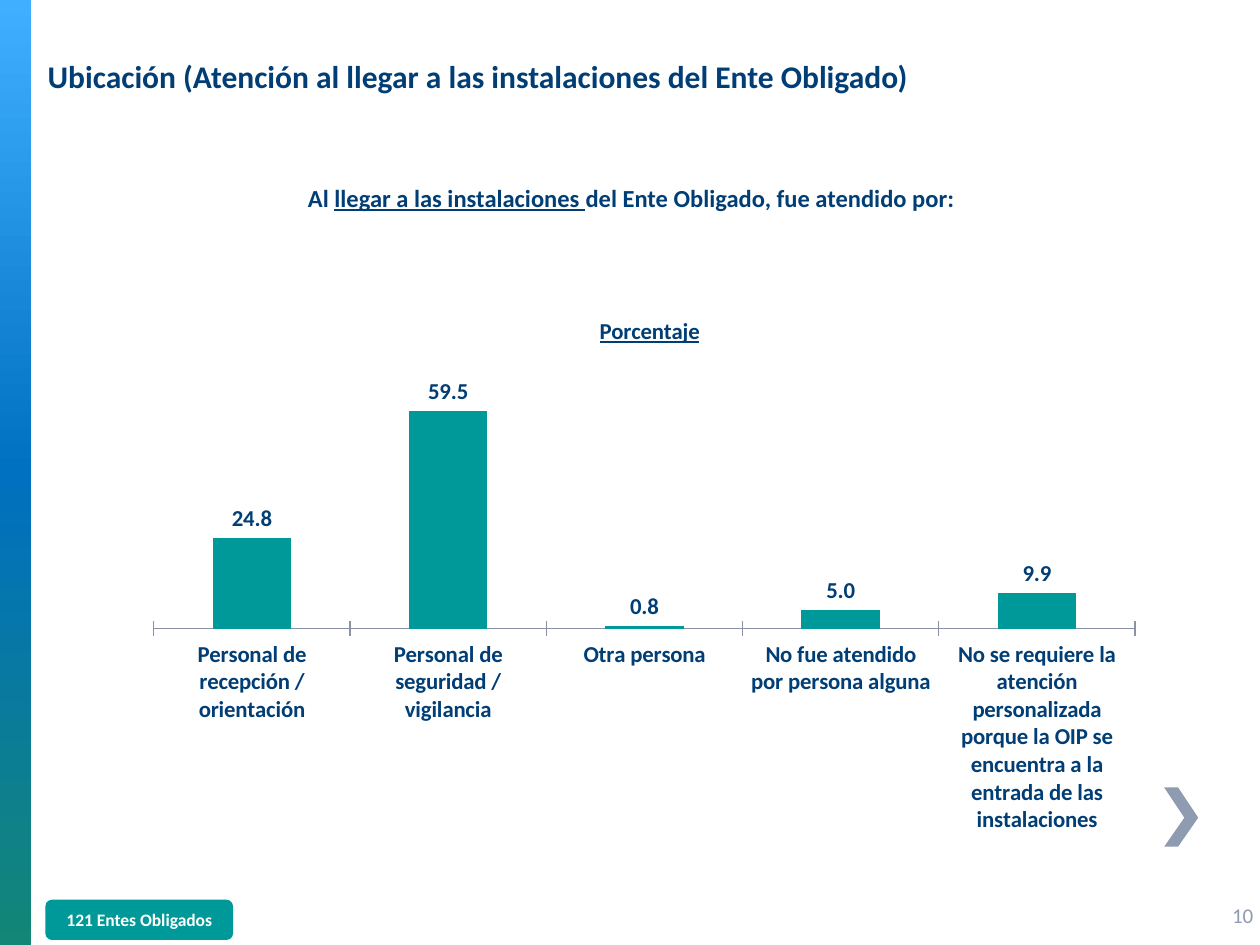
import copy

import pptx
import pptx.chart.data
import pptx.dml.color
import pptx.enum.chart
import pptx.enum.shapes
import pptx.enum.text
import pptx.oxml
import pptx.oxml.ns
import pptx.util

Inches, Pt = pptx.util.Inches, pptx.util.Pt
SHAPE = pptx.enum.shapes.MSO_SHAPE
ALIGN = pptx.enum.text.PP_ALIGN
ANCHOR = pptx.enum.text.MSO_ANCHOR
CHART = pptx.enum.chart
qn = pptx.oxml.ns.qn

FONT = "Calibri"
COLORS = {"navy": "003E75", "teal": "009999", "gray": "8E9BB0",
          "axis": "8C92A6", "white": "FFFFFF"}
BAND = [(0, "40AFFF"), (0.5, "0070C0"), (1, "138677")]

TITLE = "Ubicación (Atención al llegar a las instalaciones del Ente Obligado)"
QUESTION = [("Al ", False), ("llegar a las instalaciones ", True),
            ("del Ente Obligado, fue atendido por:", False)]
BADGE = "121 Entes Obligados"
PAGE = "10"
SERIES = "Porcentaje"
DATA = [
    ("Personal de recepción / orientación", 24.8),
    ("Personal de seguridad / vigilancia", 59.5),
    ("Otra persona", 0.8),
    ("No fue atendido por persona alguna", 5.0),
    ("No se requiere la atención personalizada porque la OIP se encuentra "
     "a la entrada de las instalaciones", 9.9),
]
PLOT = {"x": 0.01, "y": 0.14, "w": 0.97, "h": 0.45}
ARROW = [(9.35, 6.25), (9.24, 6.25), (9.4, 6.49), (9.24, 6.72),
         (9.35, 6.72), (9.51, 6.49)]


def rgb(name):
    return pptx.dml.color.RGBColor.from_string(COLORS.get(name, name))


def style(font, size, color="navy", bold=True, under=None):
    font.name, font.size, font.bold = FONT, Pt(size), bold
    font.color.rgb = rgb(color)
    if under is not None:
        font.underline = under


def write(shape, runs, size, color="navy", bold=True, align=ALIGN.LEFT):
    """Fill a shape with one paragraph of (text, underlined) runs."""
    frame = shape.text_frame
    frame.word_wrap = True
    frame.vertical_anchor = ANCHOR.MIDDLE
    para = frame.paragraphs[0]
    para.alignment = align
    for text, under in runs:
        run = para.add_run()
        run.text = text
        style(run.font, size, color, bold, under)


def add_text(slide, box, *args, **opts):
    write(slide.shapes.add_textbox(*map(Inches, box)), *args, **opts)


def paint(shape, color):
    shape.shadow.inherit = False
    shape.fill.solid()
    shape.fill.fore_color.rgb = rgb(color)
    shape.line.fill.background()


def add_band(slide):
    band = slide.shapes.add_shape(SHAPE.RECTANGLE, 0, 0, Inches(0.25), Inches(7.5))
    paint(band, "teal")
    band.fill.gradient()
    band.fill.gradient_angle = 270
    stops = next(band.element.iter(qn("a:gsLst")))
    stops.append(copy.deepcopy(stops[-1]))
    for stop, (pos, color) in zip(band.fill.gradient_stops, BAND):
        stop.position = pos
        stop.color.rgb = rgb(color)


def add_arrow(slide):
    points = [(Inches(x), Inches(y)) for x, y in ARROW]
    form = slide.shapes.build_freeform(*points[0])
    form.add_line_segments(points[1:], close=True)
    paint(form.convert_to_shape(), "gray")


def place_plot(chart):
    """Fix the inner plot area as fractions of the chart."""
    area = next(chart.element.iter(qn("c:plotArea")))
    for old in area.findall(qn("c:layout")):
        area.remove(old)
    modes = "".join(f'<c:{k}Mode val="edge"/>' for k in "xy")
    sizes = "".join(f'<c:{k} val="{v}"/>' for k, v in PLOT.items())
    area.insert(0, pptx.oxml.parse_xml(
        f'<c:layout {pptx.oxml.ns.nsdecls("c")}><c:manualLayout>'
        f'<c:layoutTarget val="inner"/>{modes}{sizes}'
        '</c:manualLayout></c:layout>'))


def add_bars(slide):
    data = pptx.chart.data.CategoryChartData(number_format="###0.0")
    data.categories = [name for name, _ in DATA]
    data.add_series(SERIES, [value for _, value in DATA])
    box = map(Inches, (1.14, 2.33, 8.03, 4.51))
    chart = slide.shapes.add_chart(
        CHART.XL_CHART_TYPE.COLUMN_CLUSTERED, *box, data).chart
    style(chart.font, 13)
    chart.has_legend = False
    chart.has_title = True
    run = chart.chart_title.text_frame.paragraphs[0].add_run()
    run.text = SERIES
    style(run.font, 13, under=True)

    axis = chart.category_axis
    axis.major_tick_mark = CHART.XL_TICK_MARK.CROSS
    axis.format.line.color.rgb = rgb("axis")
    axis.format.line.width = Pt(0.75)
    style(axis.tick_labels.font, 13)
    scale = chart.value_axis
    scale.visible = False
    scale.has_major_gridlines = False
    scale.minimum_scale, scale.maximum_scale = 0, 70

    plot = chart.plots[0]
    plot.gap_width = 150
    plot.vary_by_categories = False
    fill = plot.series[0].format.fill
    fill.solid()
    fill.fore_color.rgb = rgb("teal")
    labels = plot.series[0].data_labels
    labels.show_value = True
    labels.position = CHART.XL_LABEL_POSITION.OUTSIDE_END
    labels.number_format = "###0.0"
    labels.number_format_is_linked = False
    style(labels.font, 13)
    place_plot(chart)


def main():
    deck = pptx.Presentation()
    deck.slide_width, deck.slide_height = Inches(10), Inches(7.5)
    slide = deck.slides.add_slide(deck.slide_layouts[6])
    add_band(slide)
    add_arrow(slide)
    add_text(slide, (9.68, 7.06, 0.42, 0.4), [(PAGE, None)], 12, "gray", False)
    add_text(slide, (1.74, 1.4, 6.54, 0.34), QUESTION, 14, align=ALIGN.CENTER)
    add_bars(slide)
    add_text(slide, (0.28, 0.13, 9.29, 0.94), [(TITLE, None)], 18)
    badge = slide.shapes.add_shape(
        SHAPE.ROUNDED_RECTANGLE, *map(Inches, (0.36, 7.14, 1.49, 0.32)))
    paint(badge, "teal")
    write(badge, [(BADGE, None)], 10, "white", align=ALIGN.CENTER)
    deck.save("out.pptx")


if __name__ == "__main__":
    main()
